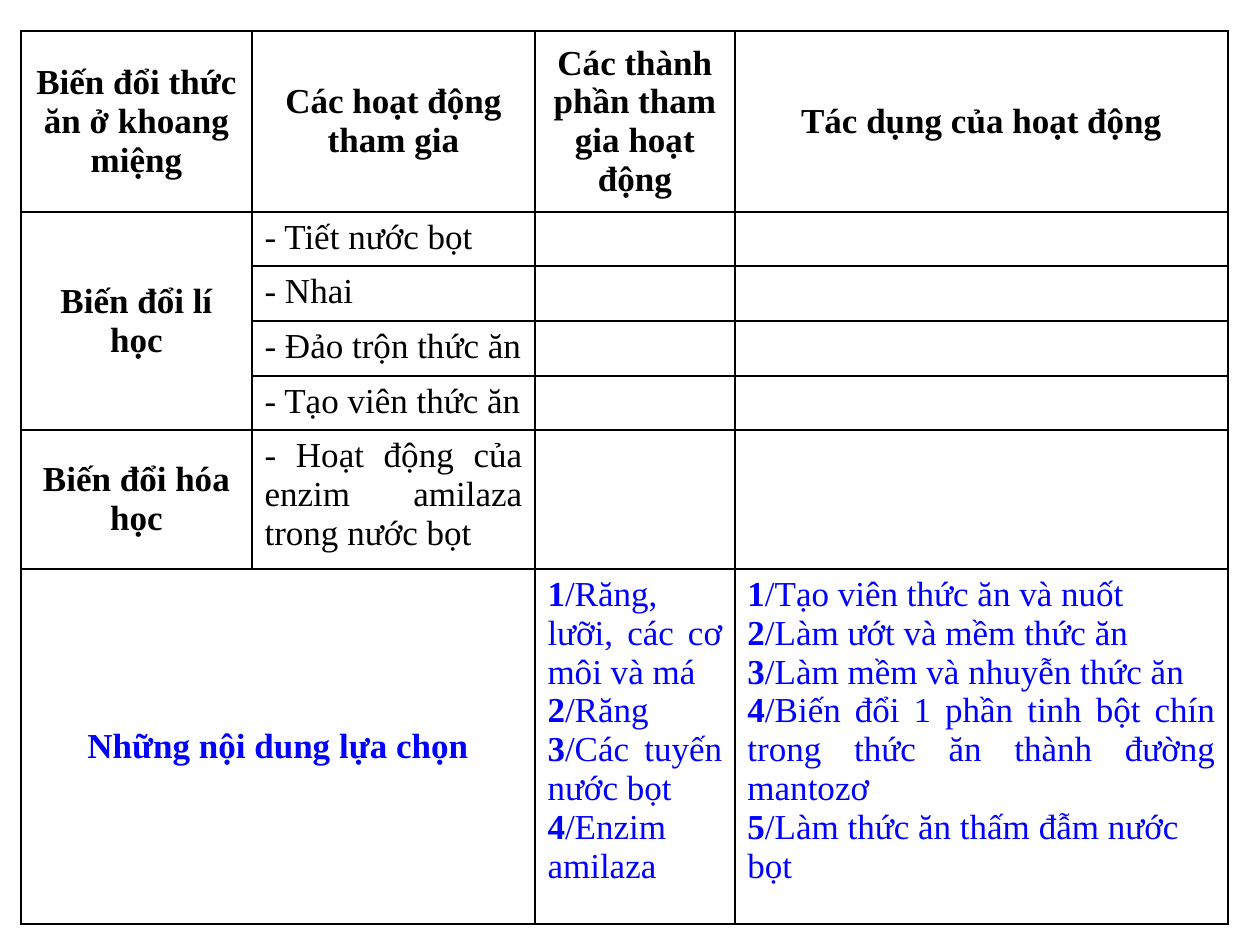
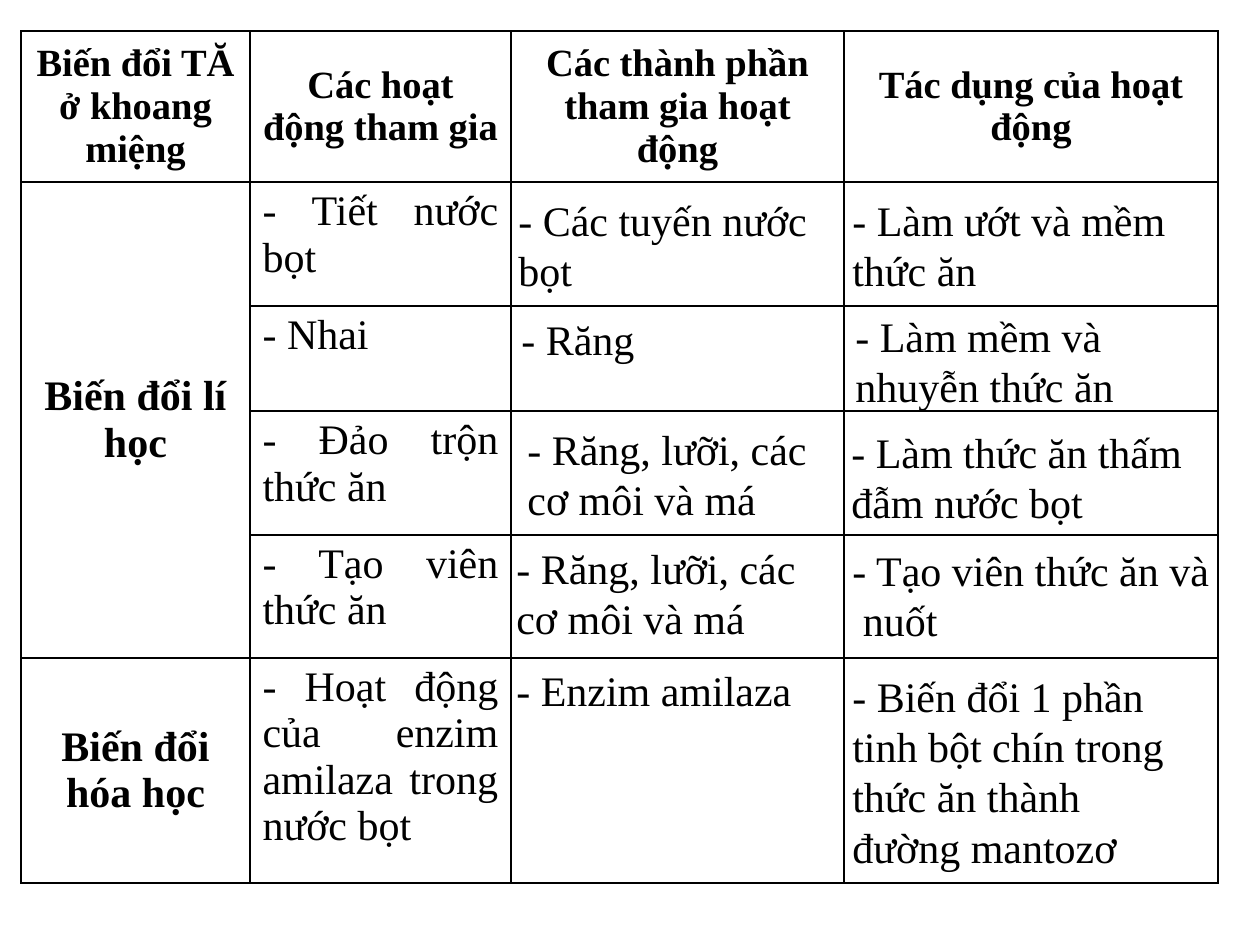
from lxml import etree
from pptx import Presentation
from pptx import util as u
from pptx.dml.color import RGBColor
from pptx.enum import text
from pptx.oxml import ns

PX_PER_INCH = 126
FONT = "Times New Roman"
BLACK, BLUE = "000000", "0000FF"
LEFT, CENTER, JUSTIFY = text.PP_ALIGN.LEFT, text.PP_ALIGN.CENTER, text.PP_ALIGN.JUSTIFY
TABLE_LEFT, TABLE_TOP = 21, 31
TEXT_SIZE = 24

PHYSICAL, CHEMICAL = "Biến đổi lí học", "Biến đổi hóa học"
ACTIVITIES = [
    "- Tiết nước bọt",
    "- Nhai",
    "- Đảo trộn thức ăn",
    "- Tạo viên thức ăn",
    "- Hoạt động của enzim amilaza trong nước bọt",
]
SHARED_HEADERS = [
    "Các hoạt động tham gia",
    "Các thành phần tham gia hoạt động",
    "Tác dụng của hoạt động",
]
PART_CHOICES = [
    "Răng, lưỡi, các cơ môi và má",
    "Răng",
    "Các tuyến nước bọt",
    "Enzim amilaza",
]
EFFECT_CHOICES = [
    "Tạo viên thức ăn và nuốt",
    "Làm ướt và mềm thức ăn",
    "Làm mềm và nhuyễn thức ăn",
    "Biến đổi 1 phần tinh bột chín trong thức ăn thành đường mantozơ",
    "Làm thức ăn thấm đẫm nước bọt",
]
# Answers: left, top, width, height in px, then paragraphs
ANSWERS = [
    (506, 188, 352, 115, ["- Các tuyến nước bọt"]),
    (509, 307, 210, 64, ["- Răng"]),
    (515, 417, 336, 115, ["- Răng, lưỡi, các cơ môi và má"]),
    (504, 536, 339, 115, ["- Răng, lưỡi, các cơ môi và má"]),
    (504, 658, 302, 64, ["- Enzim amilaza"]),
    (840, 188, 352, 115, ["- Làm ướt và mềm", "thức ăn"]),
    (843, 304, 367, 115, ["- Làm mềm và nhuyễn thức ăn"]),
    (839, 420, 367, 115, ["- Làm thức ăn thấm đẫm nước bọt"]),
    (840, 538, 386, 115, ["- Tạo viên thức ăn và", " nuốt"]),
    (840, 664, 367, 217, ["- Biến đổi 1 phần tinh bột chín trong thức ăn thành đường mantozơ"]),
]


def px(length):
    return u.Emu(round(length * u.Inches(1) / PX_PER_INCH))


def color(hex_string):
    return RGBColor.from_string(hex_string)


def add_run(paragraph, words, size, bold=False, ink=BLACK):
    run = paragraph.add_run()
    run.text = words
    for name, value in {"name": FONT, "size": u.Pt(size), "bold": bold}.items():
        setattr(run.font, name, value)
    run.font.color.rgb = color(ink)


def next_paragraph(frame, index):
    return frame.add_paragraph() if index else frame.paragraphs[0]


def frame_cell(cell):
    """Give a cell thin black borders and no fill."""
    properties = cell._tc.get_or_add_tcPr()
    for side in ("lnL", "lnR", "lnT", "lnB"):
        line = etree.SubElement(properties, ns.qn("a:" + side), w=str(u.Pt(1)))
        fill = etree.SubElement(line, ns.qn("a:solidFill"))
        etree.SubElement(fill, ns.qn("a:srgbClr"), val=BLACK)
    cell.fill.background()


def write_heading(cell, words, size, ink=BLACK):
    cell.vertical_anchor = text.MSO_ANCHOR.MIDDLE
    paragraph = cell.text_frame.paragraphs[0]
    paragraph.alignment = CENTER
    add_run(paragraph, words, size, True, ink)


def write_choices(cell, choices, size, justified):
    """List numbered choices; justified holds the numbers set flush on both sides."""
    for index, choice in enumerate(choices):
        paragraph = next_paragraph(cell.text_frame, index)
        paragraph.alignment = JUSTIFY if index + 1 in justified else LEFT
        add_run(paragraph, str(index + 1), size, True, BLUE)
        add_run(paragraph, "/" + choice, size, False, BLUE)


def add_digestion_table(slide, widths, heights, first_header, header_size, body_size):
    frame = slide.shapes.add_table(
        len(heights), len(widths),
        *map(px, (TABLE_LEFT, TABLE_TOP, sum(widths), sum(heights))))
    table = frame.table
    table.first_row = table.horz_banding = False
    for column, width in zip(table.columns, widths):
        column.width = px(width)
    for row, height in zip(table.rows, heights):
        row.height = px(height)
    for cell in table.iter_cells():
        frame_cell(cell)

    # Headers, kinds of change and activities
    for index, header in enumerate([first_header] + SHARED_HEADERS):
        write_heading(table.cell(0, index), header, header_size)
    table.cell(1, 0).merge(table.cell(4, 0))
    write_heading(table.cell(1, 0), PHYSICAL, body_size)
    write_heading(table.cell(5, 0), CHEMICAL, body_size)
    for row, activity in enumerate(ACTIVITIES, start=1):
        paragraph = table.cell(row, 1).text_frame.paragraphs[0]
        paragraph.alignment = JUSTIFY
        add_run(paragraph, activity, body_size)
    return table


def add_answer(slide, left, top, width, height, lines):
    frame = slide.shapes.add_textbox(*map(px, (left, top, width, height))).text_frame
    frame.word_wrap = True
    frame.auto_size = text.MSO_AUTO_SIZE.SHAPE_TO_FIT_TEXT
    for index, line in enumerate(lines):
        add_run(next_paragraph(frame, index), line, TEXT_SIZE)


def build_exercise(slide):
    size = 20
    table = add_digestion_table(
        slide, [231, 283, 200, 493], [181, 54, 55, 55, 54, 139, 355],
        "Biến đổi thức ăn ở khoang miệng", size, size)
    # Choices to sort into the empty cells
    table.cell(6, 0).merge(table.cell(6, 1))
    write_heading(table.cell(6, 0), "Những nội dung lựa chọn", size, BLUE)
    write_choices(table.cell(6, 2), PART_CHOICES, size, {1, 2, 3, 4})
    write_choices(table.cell(6, 3), EFFECT_CHOICES, size, {4})


def build_solution(slide):
    add_digestion_table(
        slide, [229, 261, 333, 374], [151, 124, 105, 124, 123, 225],
        "Biến đổi TĂ ở khoang miệng", 22, TEXT_SIZE)
    for answer in ANSWERS:
        add_answer(slide, *answer)


def main():
    presentation = Presentation()
    presentation.slide_width, presentation.slide_height = px(1260), px(945)
    blank = presentation.slide_layouts[6]
    for build in (build_exercise, build_solution):
        build(presentation.slides.add_slide(blank))
    presentation.save("out.pptx")


if __name__ == "__main__":
    main()
